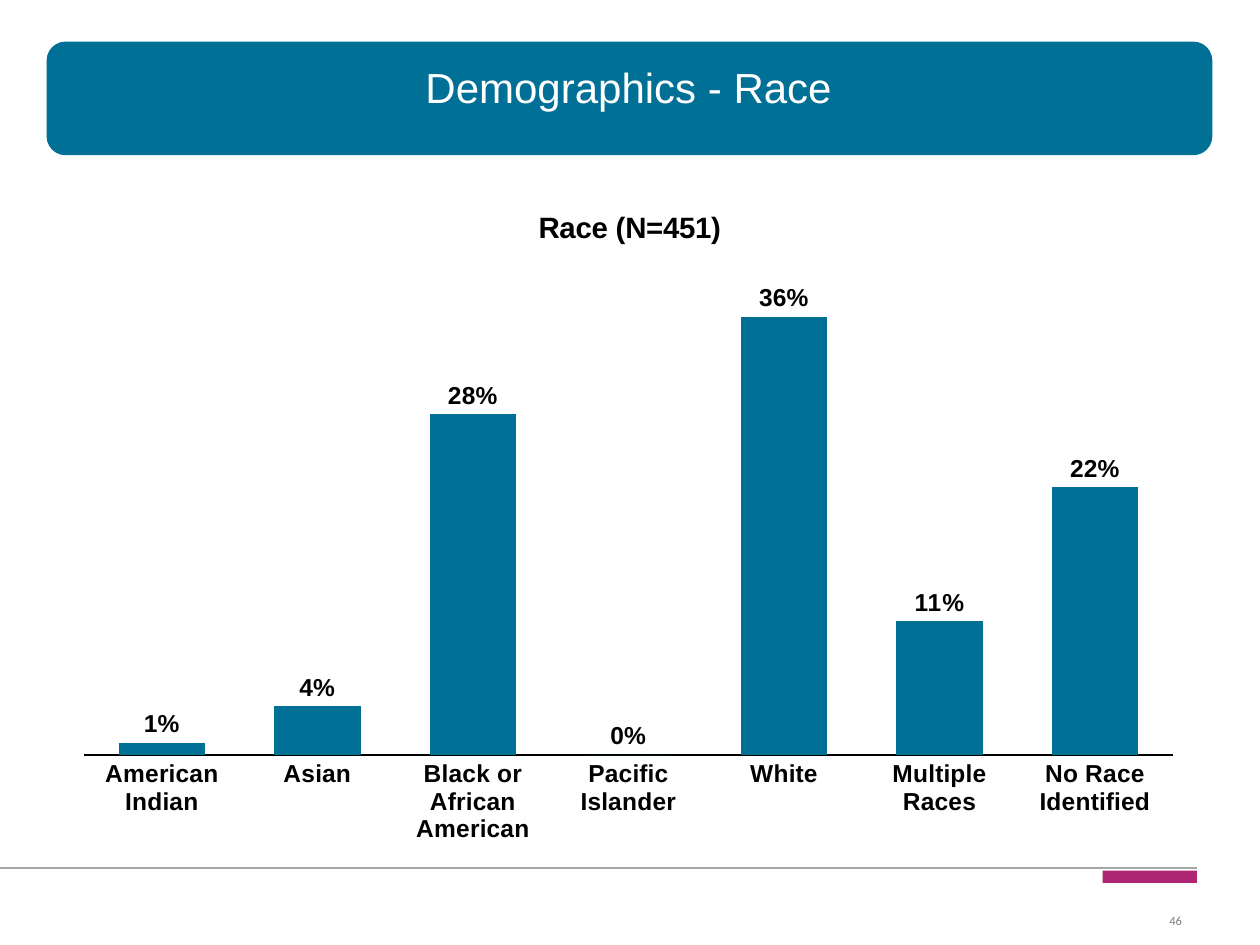
from dataclasses import dataclass

from lxml.etree import SubElement
from pptx import Presentation
from pptx.chart.data import CategoryChartData
from pptx.dml.color import RGBColor
from pptx.enum.chart import XL_CHART_TYPE, XL_LABEL_POSITION, XL_TICK_LABEL_POSITION, XL_TICK_MARK
from pptx.enum.shapes import MSO_CONNECTOR, MSO_SHAPE
from pptx.enum.text import MSO_ANCHOR, PP_ALIGN
from pptx.oxml import parse_xml
from pptx.oxml.ns import nsdecls, qn
from pptx.util import Cm, Pt

TEAL = RGBColor(0x00, 0x70, 0x96)
MAGENTA = RGBColor(0xAE, 0x25, 0x73)
RULE_GRAY = RGBColor(0xA6, 0xA6, 0xA6)
NUMBER_GRAY = RGBColor(0x7F, 0x7F, 0x7F)
BLACK = RGBColor(0, 0, 0)
WHITE = RGBColor(0xFF, 0xFF, 0xFF)

RACE_SHARES = {
    "American Indian": 0.01,
    "Asian": 0.04,
    "Black or African American": 0.28,
    "Pacific Islander": 0,
    "White": 0.36,
    "Multiple Races": 0.11,
    "No Race Identified": 0.22,
}


@dataclass
class Block:
    """A filled shape, in centimetres."""
    kind: MSO_SHAPE
    left: float
    top: float
    width: float
    height: float
    color: RGBColor


BLOCKS = [
    Block(MSO_SHAPE.ROUNDED_RECTANGLE, 0.94, 0.84, 23.5, 2.29, TEAL),
    Block(MSO_SHAPE.RECTANGLE, 22.23, 17.55, 1.9, 0.25, MAGENTA),
]


def format_font(font, *, size: float, color: RGBColor, name: str = "Arial", bold: bool = False) -> None:
    font.name, font.size, font.bold = name, Pt(size), bold
    font.color.rgb = color


def write_text(paragraph, text: str, *, align=PP_ALIGN.CENTER, **font_format) -> None:
    paragraph.alignment = align
    run = paragraph.add_run()
    run.text = text
    format_font(run.font, **font_format)


def add_block(slide, block: Block) -> None:
    shape = slide.shapes.add_shape(
        block.kind, Cm(block.left), Cm(block.top), Cm(block.width), Cm(block.height))
    shape.shadow.inherit = False
    shape.fill.solid()
    shape.fill.fore_color.rgb = block.color
    shape.line.fill.background()


def set_manual_layout(parent, previous, target: str = "", **fractions: float) -> None:
    """Place a chart part, after its previous sibling if any, by fractions of the chart."""
    for old_layout in parent.findall(qn("c:layout")):
        parent.remove(old_layout)
    inner = f'<c:layoutTarget val="{target}"/>' if target else ""
    inner += "".join(f'<c:{key}Mode val="edge"/>' for key in "xy")
    inner += "".join(f'<c:{key} val="{value}"/>' for key, value in fractions.items())
    layout = parse_xml(f'<c:layout {nsdecls("c")}><c:manualLayout>{inner}</c:manualLayout></c:layout>')
    if previous is None:
        parent.insert(0, layout)
    else:
        previous.addnext(layout)


def add_title(slide) -> None:
    title = slide.shapes.title
    title.left, title.top, title.width, title.height = Cm(1.24), Cm(1.12), Cm(22.86), Cm(1.12)
    frame = title.text_frame
    frame.vertical_anchor = MSO_ANCHOR.TOP
    frame.margin_top, frame.margin_bottom = Cm(0.11), Cm(0)
    write_text(frame.paragraphs[0], "Demographics - Race", size=24, color=WHITE)
    # Bring the title in front of its banner
    slide.shapes.element.append(title.element)


def add_race_chart(slide) -> None:
    data = CategoryChartData(number_format="0%")
    data.categories = list(RACE_SHARES)
    data.add_series("Series 1", list(RACE_SHARES.values()))
    chart = slide.shapes.add_chart(
        XL_CHART_TYPE.COLUMN_CLUSTERED, Cm(1.24), Cm(3.73), Cm(22.86), Cm(13.54), data).chart
    format_font(chart.font, size=14, color=BLACK, bold=True)
    chart.has_legend = False

    # Chart title
    chart.has_title = True
    title = chart.chart_title
    write_text(title.text_frame.paragraphs[0], "Race (N=451)", size=16.8, color=BLACK, bold=True)
    title.include_in_layout = False
    title_element = title._element
    set_manual_layout(title_element, title_element.find(qn("c:tx")), x=0.416, y=0.028)

    # Plot and columns
    plot = chart.plots[0]
    set_manual_layout(plot._element.getparent(), None, "inner", x=0.02, y=0.124, w=0.96, h=0.725)
    plot.gap_width = 80
    plot.vary_by_categories = False
    fill = plot.series[0].format.fill
    fill.solid()
    fill.fore_color.rgb = TEAL

    # Value labels
    plot.has_data_labels = True
    labels = plot.data_labels
    labels.show_value = True
    labels.position = XL_LABEL_POSITION.OUTSIDE_END
    labels.number_format, labels.number_format_is_linked = "0%", False
    format_font(labels.font, size=14, color=BLACK, bold=True)

    # Axes
    value_axis = chart.value_axis
    value_axis.minimum_scale, value_axis.maximum_scale = 0, 0.4
    value_axis.has_major_gridlines = False
    value_axis.visible = False
    category_axis = chart.category_axis
    category_axis.major_tick_mark = XL_TICK_MARK.NONE
    category_axis.tick_label_position = XL_TICK_LABEL_POSITION.NEXT_TO_AXIS
    category_axis._element.find(qn("c:lblOffset")).set("val", "0")
    category_axis.format.line.color.rgb = BLACK
    category_axis.format.line.width = Pt(1)
    format_font(category_axis.tick_labels.font, size=14, color=BLACK, bold=True)


def add_footer(slide) -> None:
    rule = slide.shapes.add_connector(MSO_CONNECTOR.STRAIGHT, Cm(0), Cm(17.5), Cm(24.13), Cm(17.5))
    rule.line.color.rgb = RULE_GRAY
    rule.line.width = Pt(0.75)
    SubElement(rule.element.spPr, qn("a:effectLst"))

    # Page number
    frame = slide.shapes.add_textbox(Cm(14.55), Cm(18.18), Cm(9.58), Cm(0.76)).text_frame
    frame.word_wrap = True
    frame.margin_right = Cm(0.3)
    frame.vertical_anchor = MSO_ANCHOR.MIDDLE
    write_text(frame.paragraphs[0], "46", align=PP_ALIGN.RIGHT, size=7.2, color=NUMBER_GRAY, name="Calibri")


def main() -> None:
    presentation = Presentation()
    presentation.slide_width, presentation.slide_height = Cm(25.4), Cm(19.05)
    slide = presentation.slides.add_slide(presentation.slide_layouts[5])
    for block in BLOCKS:
        add_block(slide, block)
    add_footer(slide)
    add_title(slide)
    add_race_chart(slide)
    presentation.save("out.pptx")


if __name__ == "__main__":
    main()
